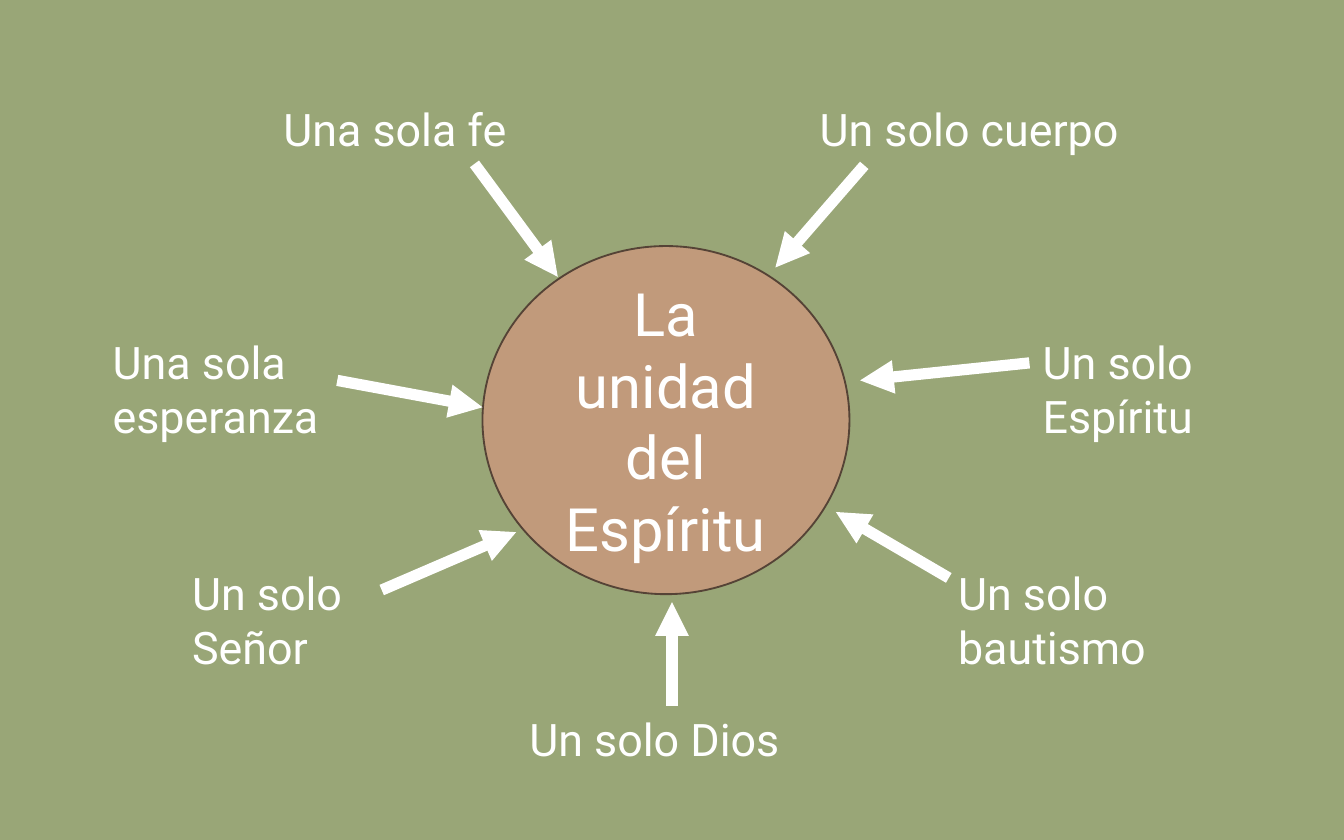
import pptx
import pptx.dml.color
import pptx.enum.shapes
import pptx.enum.text
import pptx.oxml.ns
import pptx.util
from dataclasses import dataclass
from lxml import etree

Pt = pptx.util.Pt
RGB = pptx.dml.color.RGBColor


@dataclass(frozen=True)
class Theme:
    ground: RGB = RGB.from_string("99A677")
    disc: RGB = RGB.from_string("C19A7B")
    rim: RGB = RGB.from_string("554336")
    white: RGB = RGB.from_string("FFFFFF")
    font: str = "Roboto"
    hub_size: float = 32
    label_size: float = 24
    rim_width: float = 1
    arrow_width: float = 6


@dataclass(frozen=True)
class Spoke:
    """A label and the arrow from it to the hub, in points."""
    text: str
    left: float
    top: float
    width: float
    lines: int
    start: tuple[float, float]
    end: tuple[float, float]


THEME = Theme()
PAD = 7.2    # top and bottom insets together
LEAD = 28.8  # height of one label line
TOP, MID, LOW, BASE = 51.1, 175.7, 299.5, 378

# Clockwise from the upper right
SPOKES = [
    Spoke("Un solo cuerpo", 432, TOP, 189.4, 1, (463, 88.6), (415.4, 143.3)),
    Spoke("Un solo Espíritu", 551.5, MID, 127.4, 2, (551.5, 194.4), (460.8, 203.8)),
    Spoke("Un solo bautismo", 506.2, LOW, 175.7, 2, (508.3, 309.6), (447.8, 274.3)),
    Spoke("Un solo Dios", 276.5, BASE, 161.3, 1, (360, 378), (360, 322.6)),
    Spoke("Un solo Señor", 95.8, LOW, 127.4, 2, (204.5, 316.1), (276.5, 285.1)),
    Spoke("Una sola esperanza", 53.3, MID, 127.4, 2, (180.7, 203.8), (258.5, 218.2)),
    Spoke("Una sola fe", 144.7, TOP, 163.4, 1, (254.2, 87.8), (298.8, 148.3)),
]


def write(frame, text: str, size: float, align) -> None:
    frame.word_wrap = True
    para = frame.paragraphs[0]
    para.alignment = align
    run = para.add_run()
    run.text = text
    run.font.name = THEME.font
    run.font.size = Pt(size)
    run.font.color.rgb = THEME.white


def draw_hub(slide, text: str) -> None:
    hub = slide.shapes.add_shape(
        pptx.enum.shapes.MSO_SHAPE.OVAL,
        Pt(258.5), Pt(131.8), Pt(196.6), Pt(186.5))
    hub.shadow.inherit = False
    hub.fill.solid()
    hub.fill.fore_color.rgb = THEME.disc
    hub.line.color.rgb = THEME.rim
    hub.line.width = Pt(THEME.rim_width)
    hub.text_frame.vertical_anchor = pptx.enum.text.MSO_ANCHOR.MIDDLE
    write(hub.text_frame, text, THEME.hub_size, pptx.enum.text.PP_ALIGN.CENTER)


def draw_label(slide, spoke: Spoke) -> None:
    box = slide.shapes.add_textbox(
        Pt(spoke.left), Pt(spoke.top),
        Pt(spoke.width), Pt(PAD + LEAD * spoke.lines))
    box.text_frame.auto_size = pptx.enum.text.MSO_AUTO_SIZE.SHAPE_TO_FIT_TEXT
    write(box.text_frame, spoke.text, THEME.label_size,
          pptx.enum.text.PP_ALIGN.LEFT)


def draw_arrow(slide, spoke: Spoke) -> None:
    arrow = slide.shapes.add_connector(
        pptx.enum.shapes.MSO_CONNECTOR.STRAIGHT,
        *map(Pt, spoke.start + spoke.end))
    arrow.line.color.rgb = THEME.white
    arrow.line.width = Pt(THEME.arrow_width)
    # Arrowhead at the hub end, and no shadow
    qn = pptx.oxml.ns.qn
    props = arrow.element.spPr
    etree.SubElement(props.find(qn("a:ln")), qn("a:tailEnd"), type="triangle")
    etree.SubElement(props, qn("a:effectLst"))


def main() -> None:
    deck = pptx.Presentation()
    deck.slide_width, deck.slide_height = Pt(720), Pt(450)
    slide = deck.slides.add_slide(deck.slide_layouts[6])

    # Background
    slide.background.fill.solid()
    slide.background.fill.fore_color.rgb = THEME.ground

    # Hub, labels, then arrows
    draw_hub(slide, "La unidad del Espíritu")
    for spoke in SPOKES:
        draw_label(slide, spoke)
    for spoke in SPOKES:
        draw_arrow(slide, spoke)

    deck.save("out.pptx")


if __name__ == "__main__":
    main()
